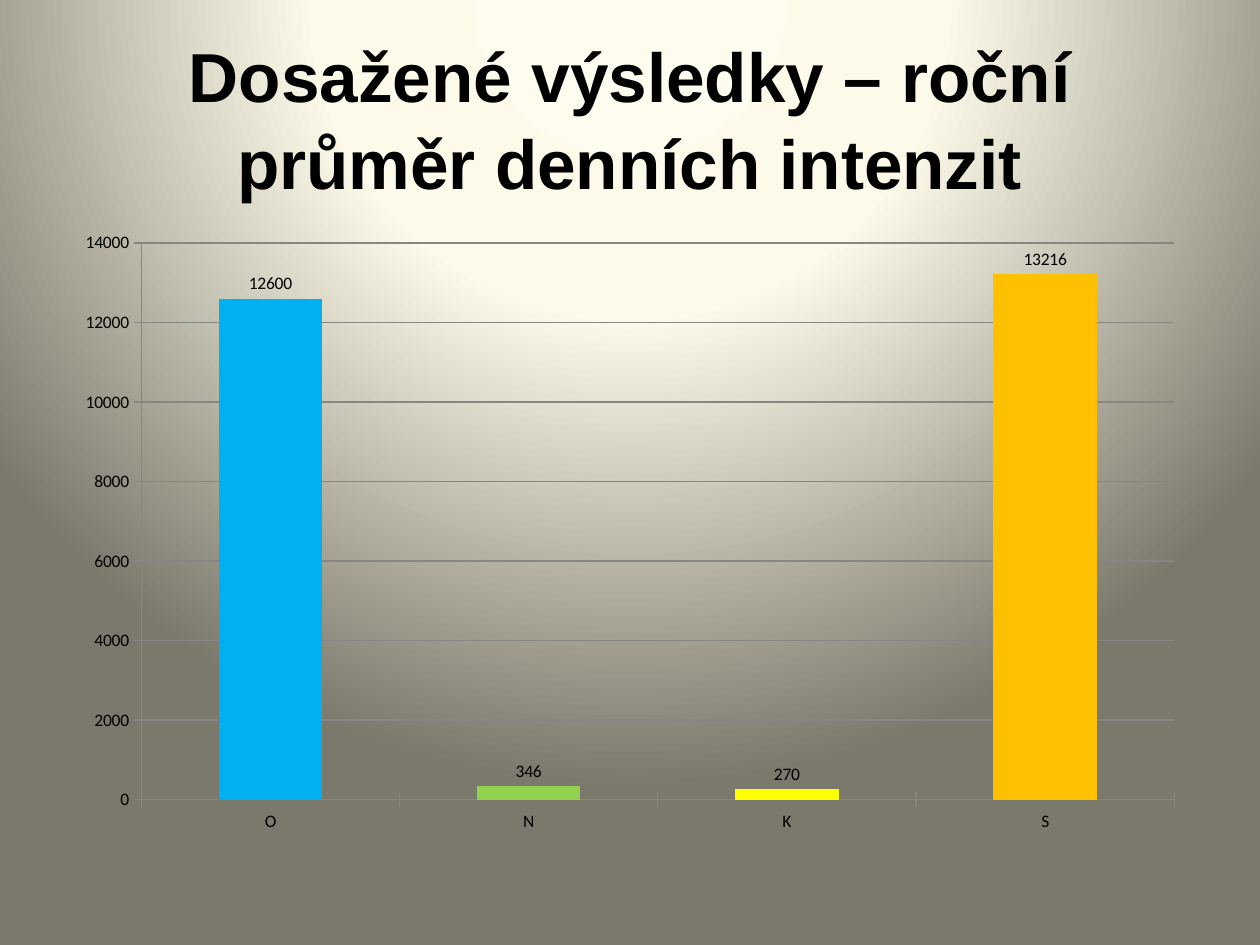
from lxml import etree
from pptx import Presentation
from pptx.chart.data import CategoryChartData
from pptx.dml.color import RGBColor
from pptx.enum.chart import XL_CHART_TYPE, XL_LABEL_POSITION, XL_TICK_MARK
from pptx.enum.text import MSO_ANCHOR, PP_ALIGN
from pptx.oxml.ns import qn
from pptx.util import Cm, Pt

COLUMNS = XL_CHART_TYPE.COLUMN_CLUSTERED
OUTSIDE_END = XL_LABEL_POSITION.OUTSIDE_END
CROSS = XL_TICK_MARK.CROSS
MIDDLE = MSO_ANCHOR.MIDDLE
CENTER = PP_ALIGN.CENTER

COLORS = {
    "text": "000000",
    "grid": "868686",
    "glow": "FEFCEE",
    "cream": "FDFAEA",
    "olive": "7B796B",
    "blue": "00B0F0",
    "green": "92D050",
    "yellow": "FFFF00",
    "orange": "FFC000",
}
INTENSITIES = [
    ("O", 12600, "blue"),
    ("N", 346, "green"),
    ("K", 270, "yellow"),
    ("S", 13216, "orange"),
]
GLOW_STOPS = [(0, "glow"), (40, "cream"), (100, "olive")]
GLOW_FOCUS = {"l": 50, "t": -80, "r": 50, "b": 180}


def rgb(name):
    return RGBColor.from_string(COLORS[name])


def percent(value):
    return str(value * 1000)


def add_glow_background(slide):
    """Fill the background with a circular gradient centred above the slide."""
    background = etree.Element(qn("p:bg"))
    properties = etree.SubElement(background, qn("p:bgPr"))
    gradient = etree.SubElement(properties, qn("a:gradFill"), rotWithShape="1")
    stops = etree.SubElement(gradient, qn("a:gsLst"))
    for position, color in GLOW_STOPS:
        stop = etree.SubElement(stops, qn("a:gs"), pos=percent(position))
        etree.SubElement(stop, qn("a:srgbClr"), val=COLORS[color])
    circle = etree.SubElement(gradient, qn("a:path"), {"path": "circle"})
    focus = {side: percent(value) for side, value in GLOW_FOCUS.items()}
    etree.SubElement(circle, qn("a:fillToRect"), focus)
    etree.SubElement(properties, qn("a:effectLst"))
    slide.element.find(qn("p:cSld")).insert(0, background)


def add_heading(slide, left, top, width, height):
    frame = slide.shapes.add_textbox(left, top, width, height).text_frame
    frame.word_wrap = True
    frame.vertical_anchor = MIDDLE
    paragraph = frame.paragraphs[0]
    paragraph.alignment = CENTER
    paragraph.line_spacing = 1.04
    heading = paragraph.add_run()
    heading.text = "Dosažené výsledky – roční průměr denních intenzit"
    heading.font.name = "Arial"
    heading.font.size = Pt(39.6)
    heading.font.bold = True
    heading.font.color.rgb = rgb("text")


def style_axis(axis):
    axis.major_tick_mark = CROSS
    axis.minor_tick_mark = XL_TICK_MARK.NONE
    axis.format.line.color.rgb = rgb("grid")
    axis.format.line.width = Pt(0.75)


def add_intensity_chart(slide, left, top, width, height):
    data = CategoryChartData()
    data.categories = [category for category, _, _ in INTENSITIES]
    data.add_series("Series 1", [value for _, value, _ in INTENSITIES])
    chart = slide.shapes.add_chart(COLUMNS, left, top, width, height, data).chart
    chart.has_title = False
    chart.has_legend = False
    chart.font.name = "Calibri"
    chart.font.size = Pt(10)
    chart.font.color.rgb = rgb("text")

    style_axis(chart.category_axis)
    scale = chart.value_axis
    style_axis(scale)
    scale.minimum_scale = 0
    scale.maximum_scale = 14000
    scale.major_unit = 2000
    scale.has_major_gridlines = True
    scale.major_gridlines.format.line.color.rgb = rgb("grid")
    scale.major_gridlines.format.line.width = Pt(0.75)

    plot = chart.plots[0]
    plot.gap_width = 150
    plot.vary_by_categories = False
    intensities = plot.series[0]
    intensities.format.fill.solid()
    intensities.format.fill.fore_color.rgb = rgb(INTENSITIES[0][2])
    for index, (_, _, color) in enumerate(INTENSITIES[1:], start=1):
        fill = intensities.points[index].format.fill
        fill.solid()
        fill.fore_color.rgb = rgb(color)
    intensities.data_labels.show_value = True
    intensities.data_labels.position = OUTSIDE_END


def main():
    presentation = Presentation()
    presentation.slide_width = Cm(25.4)
    presentation.slide_height = Cm(19.05)
    slide = presentation.slides.add_slide(presentation.slide_layouts[6])
    margin = Cm(1.27)
    content_width = presentation.slide_width - 2 * margin
    add_glow_background(slide)
    add_heading(slide, margin, Cm(0.76), content_width, Cm(3.18))
    add_intensity_chart(slide, margin, Cm(4.45), content_width, Cm(12.57))
    presentation.save("out.pptx")


if __name__ == "__main__":
    main()
